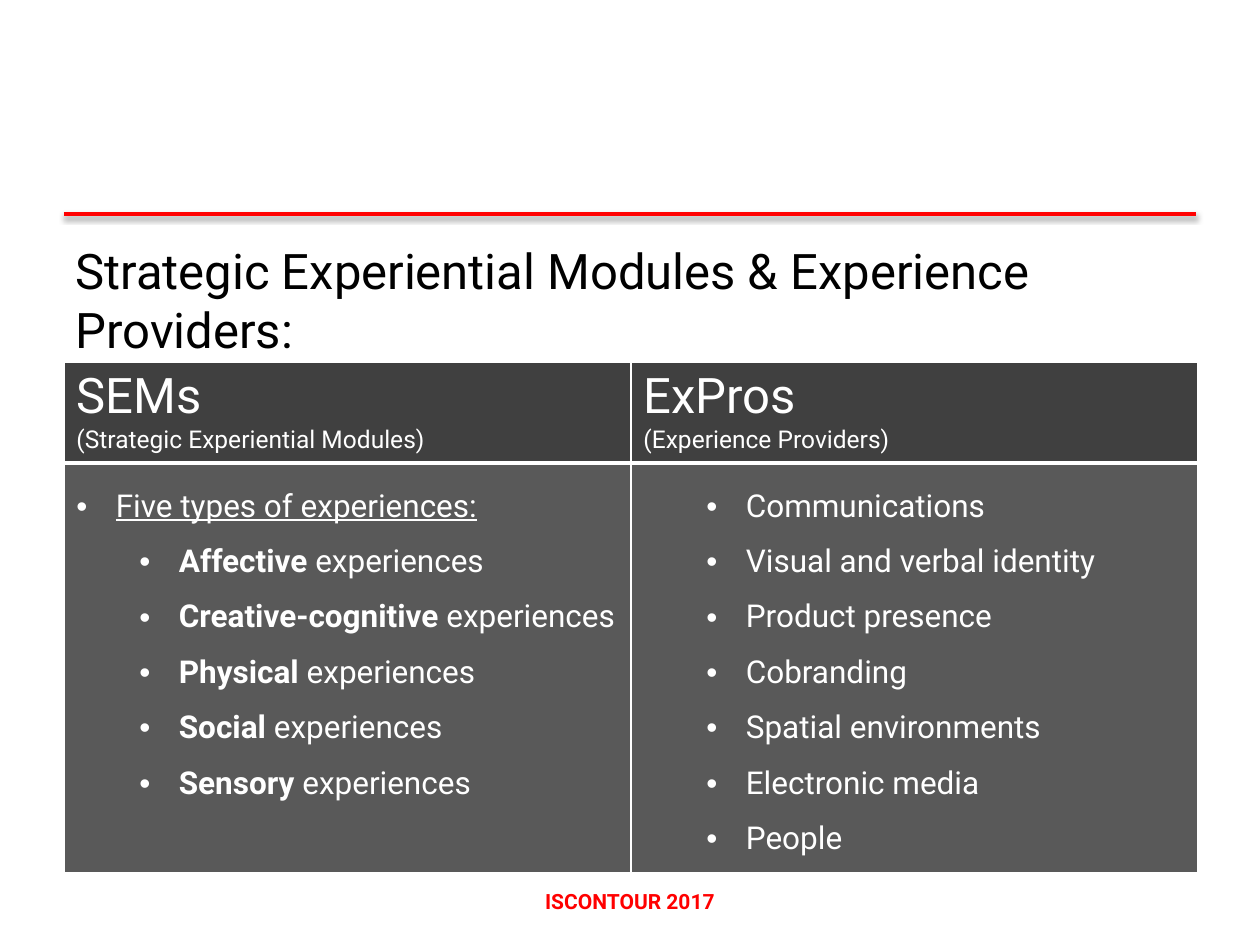
from lxml import etree
from pptx import Presentation
from pptx.dml.color import RGBColor
from pptx.enum.shapes import MSO_CONNECTOR
from pptx.enum.text import MSO_ANCHOR, PP_ALIGN
from pptx.oxml.ns import nsdecls, qn
from pptx.oxml import parse_xml
from pptx.util import Pt

STRAIGHT = MSO_CONNECTOR.STRAIGHT
TOP = MSO_ANCHOR.TOP
LEFT, CENTER = PP_ALIGN.LEFT, PP_ALIGN.CENTER

FONT = "Roboto"
BLACK = RGBColor(0x00, 0x00, 0x00)
WHITE = RGBColor(0xFF, 0xFF, 0xFF)
RED = RGBColor(0xFF, 0x00, 0x00)
HEADER_GRAY = RGBColor(0x40, 0x40, 0x40)
BODY_GRAY = RGBColor(0x59, 0x59, 0x59)

TITLE_ONLY_LAYOUT = 5
TITLE_ONLY_NAME = "Strategic Experiential Modules & Experience Providers:"
HEADERS = [
    ("SEMs", "(Strategic Experiential Modules)"),
    ("ExPros", "(Experience Providers)"),
]
EXPERIENCE_TYPES = ["Affective", "Creative-cognitive", "Physical", "Social", "Sensory"]
PROVIDERS = [
    "Communications",
    "Visual and verbal identity",
    "Product presence",
    "Cobranding",
    "Spatial environments",
    "Electronic media",
    "People",
]


def add_run(paragraph, text, size, color=WHITE, bold=False, underline=False):
    run = paragraph.add_run()
    run.text = text
    font = run.font
    font.name, font.size = FONT, Pt(size)
    font.bold, font.underline = bold, underline
    font.color.rgb = color


def add_bullet(paragraph, level):
    paragraph.level = level
    paragraph.line_spacing = 1.5
    properties = paragraph._p.get_or_add_pPr()
    properties.set("marL", str(Pt(22.5 + 36 * level)))
    properties.set("indent", str(Pt(-22.5)))
    etree.SubElement(properties, qn("a:buFont")).set("typeface", "Arial")
    etree.SubElement(properties, qn("a:buChar")).set("char", "•")


def style_cell(cell, fill_color, bottom_width):
    properties = cell._tc.get_or_add_tcPr()
    for side, width in (("L", 1), ("R", 1), ("T", 1), ("B", bottom_width)):
        properties.append(parse_xml(
            f'<a:ln{side} {nsdecls("a")} w="{Pt(width)}"><a:solidFill>'
            f'<a:srgbClr val="{WHITE}"/></a:solidFill></a:ln{side}>'))
    cell.fill.solid()
    cell.fill.fore_color.rgb = fill_color
    cell.vertical_anchor = TOP


def add_rule(slide, left, top, width):
    rule = slide.shapes.add_connector(
        STRAIGHT, Pt(left), Pt(top), Pt(left + width), Pt(top))
    rule.line.color.rgb = RED
    rule.line.width = Pt(2)
    # Soft shadow straight below the line
    rule._element.spPr.append(parse_xml(
        f'<a:effectLst {nsdecls("a")}><a:outerShdw blurRad="{Pt(3.1)}" '
        f'dist="{Pt(1.6)}" dir="5400000" rotWithShape="0">'
        f'<a:srgbClr val="{BLACK}"><a:alpha val="38000"/></a:srgbClr>'
        '</a:outerShdw></a:effectLst>'))


def add_title(slide, left, top, width, height):
    title = slide.shapes.title
    title.left, title.top = Pt(left), Pt(top)
    title.width, title.height = Pt(width), Pt(height)
    title.text_frame.vertical_anchor = TOP
    title.text_frame.word_wrap = True
    paragraph = title.text_frame.paragraphs[0]
    paragraph.alignment = LEFT
    add_run(paragraph, TITLE_ONLY_NAME, 28, BLACK)


def add_footer(slide, left, top, width, height):
    footer = slide.shapes.add_textbox(Pt(left), Pt(top), Pt(width), Pt(height))
    footer.text_frame.word_wrap = True
    paragraph = footer.text_frame.paragraphs[0]
    paragraph.alignment = CENTER
    add_run(paragraph, "ISCONTOUR 2017", 12, RED, bold=True)


def add_modules_table(slide, left, top, width, header_height, body_height):
    table = slide.shapes.add_table(
        2, 2, Pt(left), Pt(top), Pt(width), Pt(header_height + body_height)).table
    table.horz_banding = False
    table.rows[0].height = Pt(header_height)
    table.rows[1].height = Pt(body_height)

    # Header row
    for column, (name, meaning) in enumerate(HEADERS):
        header = table.cell(0, column)
        style_cell(header, HEADER_GRAY, 3)
        add_run(header.text_frame.paragraphs[0], name, 28)
        add_run(header.text_frame.add_paragraph(), meaning, 14)
        style_cell(table.cell(1, column), BODY_GRAY, 1)

    # Experience types
    modules = table.cell(1, 0).text_frame
    add_bullet(modules.paragraphs[0], 0)
    add_run(modules.paragraphs[0], "Five types of experiences:", 18, underline=True)
    for experience in EXPERIENCE_TYPES:
        paragraph = modules.add_paragraph()
        add_bullet(paragraph, 1)
        add_run(paragraph, experience, 18, bold=True)
        add_run(paragraph, " experiences", 18)

    # Experience providers
    providers = table.cell(1, 1).text_frame
    for index, provider in enumerate(PROVIDERS):
        paragraph = providers.add_paragraph() if index else providers.paragraphs[0]
        add_bullet(paragraph, 1)
        add_run(paragraph, provider, 18)


def main():
    presentation = Presentation()
    presentation.slide_width, presentation.slide_height = Pt(720), Pt(540)
    slide = presentation.slides.add_slide(
        presentation.slide_layouts[TITLE_ONLY_LAYOUT])
    add_rule(slide, 36.5, 122.4, 647)
    add_footer(slide, 229.7, 504, 260.6, 21.6)
    add_modules_table(slide, 36.5, 207, 648, 56, 228)
    add_title(slide, 36, 134, 648, 75)
    presentation.save("out.pptx")


if __name__ == "__main__":
    main()
